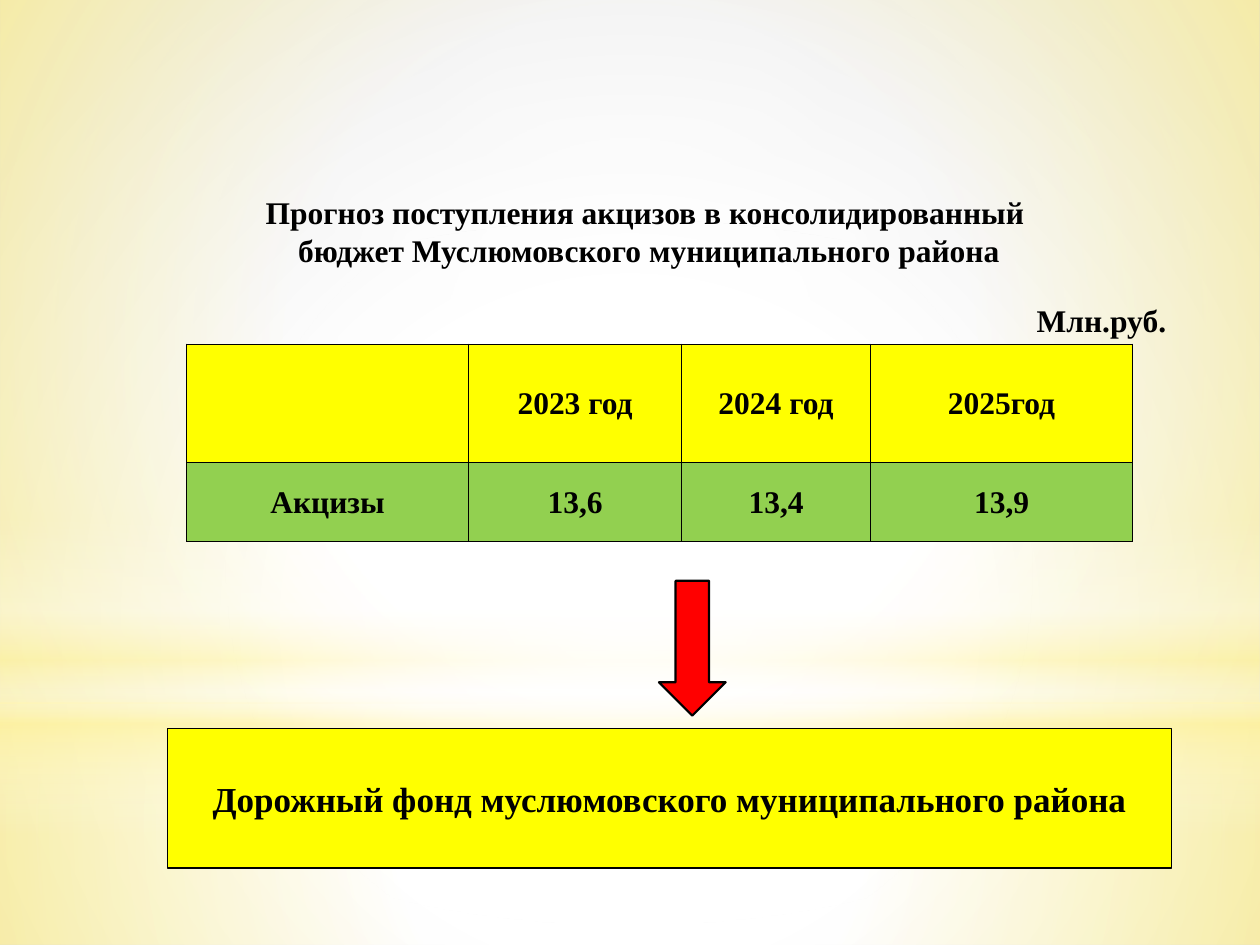
"""Build a slide on the excise forecast that feeds the road fund."""
from dataclasses import dataclass
from typing import Optional

from lxml import etree
from pptx import Presentation
from pptx.dml.color import RGBColor
from pptx.enum.shapes import MSO_SHAPE
from pptx.enum.text import MSO_ANCHOR, PP_ALIGN
from pptx.oxml import parse_xml
from pptx.oxml.ns import nsdecls, qn
from pptx.util import Inches, Pt

RECT, OVAL, DOWN = MSO_SHAPE.RECTANGLE, MSO_SHAPE.OVAL, MSO_SHAPE.DOWN_ARROW
TOP, MID = MSO_ANCHOR.TOP, MSO_ANCHOR.MIDDLE
LEFT, MIDST = PP_ALIGN.LEFT, PP_ALIGN.CENTER
WIDE, HIGH = Inches(10), Inches(7.5)
COLS, ROWS = 1000, 750
FONT = "Times New Roman"
HUES = {"ink": "000000", "white": "FFFFFF", "grey": "D1D1D1", "cream": "FFF39D",
        "gold": "FFFF00", "green": "92D050", "red": "FF0000"}
HEART = (50, 50, 50, 50)


@dataclass
class Box:
    left: float
    top: float
    wide: float
    high: float

    def spot(self) -> tuple:
        return across(self.left), down(self.top), across(self.wide), down(self.high)


@dataclass
class Glow:
    stops: list
    heart: Optional[tuple] = HEART


@dataclass
class Panel:
    kind: int
    box: Box
    glow: Glow


@dataclass
class Block:
    kind: int
    box: Box
    hue: str
    line: float


BACK = Glow([(0, "white", 100), (42, "white", 100), (100, "grey", 100)], (24, 44, 24, 12))
PANELS = [
    Panel(RECT, Box(0, 558, COLS, 192),
          Glow([(0, "white", 91), (37, "white", 76), (100, "cream", 79)])),
    Panel(RECT, Box(0, 0, COLS, 558),
          Glow([(0, "white", 89), (48, "white", 62), (100, "cream", 79)])),
    Panel(RECT, Box(0, 412, COLS, 250),
          Glow([(0, "white", 0), (29, "white", 30), (45, "cream", 40),
                (55, "white", 26), (65, "cream", 60), (100, "white", 0)], None)),
    Panel(OVAL, Box(0, 175, COLS, 558), Glow([(0, "white", 100), (56, "white", 0)])),
]
ARROW = Block(DOWN, Box(523, 461, 53, 107), "red", 1.25)
FUND = Block(RECT, Box(133, 578, 797, 111), "gold", 0.75)
GRID = Box(148, 273, 751, 157)
WIDTHS, HEIGHTS = (224, 169, 150, 208), (94, 63)
DATA = [("gold", ("", "2023 год", "2024 год", "2025год")),
        ("green", ("Акцизы", "13,6", "13,4", "13,9"))]


def across(n: float) -> int:
    return round(WIDE * n / COLS)


def down(n: float) -> int:
    return round(HIGH * n / ROWS)


def tint(name: str) -> RGBColor:
    return RGBColor.from_string(HUES[name])


def blend(glow: Glow) -> etree.ElementBase:
    stops = "".join(
        f'<a:gs pos="{pos * 1000}"><a:srgbClr val="{HUES[hue]}">'
        f'<a:alpha val="{show * 1000}"/></a:srgbClr></a:gs>'
        for pos, hue, show in glow.stops)
    way = '<a:lin ang="5400000" scaled="0"/>'
    if glow.heart:
        sides = " ".join(f'{side}="{n * 1000}"' for side, n in zip("ltrb", glow.heart))
        way = f'<a:path path="circle"><a:fillToRect {sides}/></a:path>'
    return parse_xml(f'<a:gradFill {nsdecls("a")} rotWithShape="1">'
                     f'<a:gsLst>{stops}</a:gsLst>{way}</a:gradFill>')


def swap(host: etree.ElementBase, glow: Glow) -> None:
    host.replace(host.find(qn("a:solidFill")), blend(glow))


def write(frame, lines: tuple, size: float = 18, align=MIDST, anchor=MID) -> None:
    frame.vertical_anchor = anchor
    for i, line in enumerate(lines):
        para = frame.add_paragraph() if i else frame.paragraphs[0]
        para.alignment = align
        run = para.add_run()
        run.text = line
        font = run.font
        font.name, font.size, font.bold = FONT, Pt(size), True
        font.color.rgb = tint("ink")


def draw_panel(slide, panel: Panel) -> None:
    shape = slide.shapes.add_shape(panel.kind, *panel.box.spot())
    shape.shadow.inherit = False
    shape.line.fill.background()
    shape.fill.solid()
    swap(shape.element.spPr, panel.glow)


def draw_block(slide, block: Block):
    shape = slide.shapes.add_shape(block.kind, *block.box.spot())
    shape.shadow.inherit = False
    shape.fill.solid()
    shape.fill.fore_color.rgb = tint(block.hue)
    shape.line.color.rgb = tint("ink")
    shape.line.width = Pt(block.line)
    return shape


def frame_cell(cell) -> None:
    props = cell._tc.get_or_add_tcPr()
    for i, side in enumerate("LRTB"):
        props.insert(i, parse_xml(
            f'<a:ln{side} {nsdecls("a")} w="{Pt(0.5)}"><a:solidFill>'
            f'<a:srgbClr val="{HUES["ink"]}"/></a:solidFill></a:ln{side}>'))


def draw_table(slide) -> None:
    table = slide.shapes.add_table(len(HEIGHTS), len(WIDTHS), *GRID.spot()).table
    table.first_row = table.horz_banding = False
    for col, n in zip(table.columns, WIDTHS):
        col.width = across(n)
    for row, n, (hue, texts) in zip(table.rows, HEIGHTS, DATA):
        row.height = down(n)
        for cell, text in zip(row.cells, texts):
            cell.fill.solid()
            cell.fill.fore_color.rgb = tint(hue)
            cell.margin_left = cell.margin_right = cell.margin_top = across(1)
            cell.margin_bottom = 0
            cell.vertical_anchor = MID
            if text:
                write(cell.text_frame, (text,))
            frame_cell(cell)


def main() -> None:
    deck = Presentation()
    deck.slide_width, deck.slide_height = WIDE, HIGH
    slide = deck.slides.add_slide(deck.slide_layouts[5])
    slide.background.fill.solid()
    swap(slide.element.find(".//" + qn("p:bgPr")), BACK)
    for panel in PANELS:
        draw_panel(slide, panel)
    draw_table(slide)

    title = slide.shapes.title
    slide.shapes.element.append(title.element)
    title.left, title.top, title.width, title.height = Box(94, 148, 836, 71).spot()
    write(title.text_frame, ("Прогноз поступления акцизов в консолидированный",
                             " бюджет Муслюмовского муниципального района"), anchor=TOP)

    draw_block(slide, ARROW)
    fund = draw_block(slide, FUND)
    write(fund.text_frame, ("Дорожный фонд муслюмовского муниципального района",), 20)
    unit = slide.shapes.add_textbox(*Box(813, 234, 124, 40).spot())
    unit.text_frame.word_wrap = False
    write(unit.text_frame, ("Млн.руб.",), align=LEFT, anchor=TOP)
    deck.save("out.pptx")


if __name__ == "__main__":
    main()
